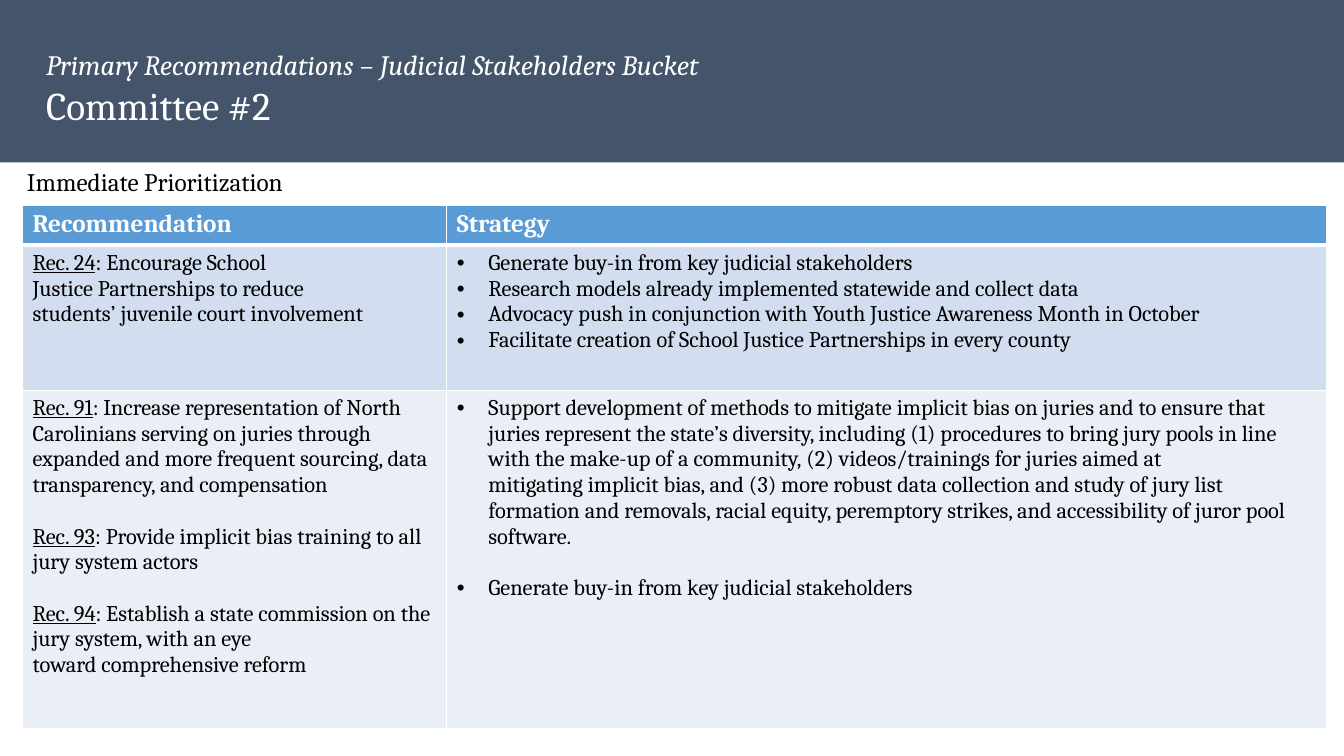
import pptx
import pptx.dml.color
import pptx.enum.shapes
import pptx.enum.text
import pptx.oxml.ns
import pptx.util
from lxml import etree

Pt = pptx.util.Pt
RGBColor = pptx.dml.color.RGBColor

# Content: "~" stands for a non-breaking space
KICKER = "Primary Recommendations – Judicial Stakeholders Bucket"
TITLE = "Committee #2"
SUBTITLE = "Immediate Prioritization"
HEADERS = ["Recommendation", "Strategy"]
# Each row: recommendations (label, text), strategies, gap between strategies
ROWS = [
    (
        [("Rec. 24", ":~Encourage School Justice~Partnerships to reduce "
                     "students’~juvenile court involvement")],
        ["Generate buy-in from key judicial stakeholders",
         "Research models already implemented statewide and collect data",
         "Advocacy push in conjunction with~Youth Justice Awareness Month in October",
         "Facilitate creation of School Justice Partnerships in every county"],
        0,
    ),
    (
        [("Rec. 91", ": Increase representation of~North Carolinians serving on "
                     "juries~through expanded and more frequent~sourcing, data "
                     "transparency, and~compensation"),
         ("Rec. 93", ":~Provide implicit bias training~to all jury system actors"),
         ("Rec. 94", ": Establish a state commission~on the jury system, with an "
                     "eye toward~comprehensive reform")],
        ["Support development of methods to~mitigate implicit bias on juries and "
         "to~ensure that juries represent the state’s diversity, including "
         "(1)~procedures to bring jury pools in line with the make-up of a "
         "community,~(2)~videos/trainings for juries aimed at mitigating~implicit "
         "bias, and (3)~more robust data collection and study of jury list "
         "formation and removals, racial equity, peremptory strikes, "
         "and~accessibility of juror pool software.",
         "Generate buy-in from key judicial stakeholders"],
        18.4,
    ),
]

# Style
FONT = "Cambria"
WHITE = RGBColor(0xFF, 0xFF, 0xFF)
BLACK = RGBColor(0, 0, 0)
BANNER = RGBColor(0x44, 0x54, 0x6A)
HEADER_FILL = RGBColor(0x5B, 0x9B, 0xD5)
ROW_FILLS = [RGBColor(0xD2, 0xDE, 0xEF), RGBColor(0xEA, 0xEF, 0xF7)]
COLUMN_WIDTHS = [303.1, 628.6]
ROW_HEIGHTS = [28, 103.5, 241.5]
RECOMMENDATION_GAP = 18.4
BULLET_INDENT = 22.5


def set_font(paragraph, size, color, bold=False, italic=False):
    font = paragraph.font
    font.name, font.size, font.bold, font.italic = FONT, Pt(size), bold, italic
    font.color.rgb = color


def add_text(slide, left, top, width, height, lines, wrap):
    """lines: (text, size, color, italic) tuples, one paragraph each."""
    frame = slide.shapes.add_textbox(Pt(left), Pt(top), Pt(width), Pt(height)).text_frame
    frame.word_wrap = wrap
    frame.auto_size = pptx.enum.text.MSO_AUTO_SIZE.SHAPE_TO_FIT_TEXT
    for paragraph, (text, size, color, italic) in zip(paragraphs(frame, len(lines)), lines):
        paragraph.text = text
        set_font(paragraph, size, color, italic=italic)


def paragraphs(frame, count, gap=0):
    for index in range(count):
        paragraph = frame.add_paragraph() if index else frame.paragraphs[0]
        if index and gap:
            paragraph.space_before = Pt(gap)
        yield paragraph


def add_run(paragraph, text, underline=False):
    run = paragraph.add_run()
    run.text = text.replace("~", chr(160))
    if underline:
        run.font.underline = True


def add_bullet(paragraph):
    properties = paragraph._p.get_or_add_pPr()
    properties.set("marL", str(Pt(BULLET_INDENT)))
    properties.set("indent", str(-Pt(BULLET_INDENT)))
    for tag, name, value in (("a:buFont", "typeface", "Arial"), ("a:buChar", "char", "•")):
        etree.SubElement(properties, pptx.oxml.ns.qn(tag)).set(name, value)


def style_cell(cell, fill, top=1, bottom=1):
    properties = cell._tc.get_or_add_tcPr()
    for side, width in (("L", 1), ("R", 1), ("T", top), ("B", bottom)):
        line = etree.SubElement(properties, pptx.oxml.ns.qn("a:ln" + side), w=str(Pt(width)))
        solid = etree.SubElement(line, pptx.oxml.ns.qn("a:solidFill"))
        etree.SubElement(solid, pptx.oxml.ns.qn("a:srgbClr"), val=str(WHITE))
    cell.fill.solid()
    cell.fill.fore_color.rgb = fill


presentation = pptx.Presentation()
presentation.slide_width, presentation.slide_height = Pt(960), Pt(540)
slide = presentation.slides.add_slide(presentation.slide_layouts[6])

# Banner and headings
banner = slide.shapes.add_shape(
    pptx.enum.shapes.MSO_SHAPE.RECTANGLE, 0, 0, Pt(960), Pt(116))
banner.shadow.inherit = False
banner.fill.solid()
banner.fill.fore_color.rgb = BANNER
banner.line.fill.background()
add_text(slide, 25.9, 30.2, 561.6, 65.5,
         [(KICKER, 20, WHITE, True), (TITLE, 28, WHITE, False)], wrap=False)

# Table
table = slide.shapes.add_table(
    len(ROW_HEIGHTS), len(COLUMN_WIDTHS), Pt(16.1), Pt(146.4),
    Pt(sum(COLUMN_WIDTHS)), Pt(sum(ROW_HEIGHTS))).table
for column, width in zip(table.columns, COLUMN_WIDTHS):
    column.width = Pt(width)
for row, height in zip(table.rows, ROW_HEIGHTS):
    row.height = Pt(height)

for index, header in enumerate(HEADERS):
    cell = table.cell(0, index)
    style_cell(cell, HEADER_FILL, bottom=3)
    paragraph = cell.text_frame.paragraphs[0]
    paragraph.text = header
    set_font(paragraph, 18, WHITE, bold=True)

for number, (recommendations, strategies, gap) in enumerate(ROWS, start=1):
    left_cell, right_cell = table.cell(number, 0), table.cell(number, 1)
    for cell in (left_cell, right_cell):
        style_cell(cell, ROW_FILLS[number - 1], top=3 if number == 1 else 1)
    slots = paragraphs(left_cell.text_frame, len(recommendations), RECOMMENDATION_GAP)
    for paragraph, (label, text) in zip(slots, recommendations):
        set_font(paragraph, 16, BLACK)
        add_run(paragraph, label, underline=True)
        add_run(paragraph, text)
    slots = paragraphs(right_cell.text_frame, len(strategies), gap)
    for paragraph, text in zip(slots, strategies):
        set_font(paragraph, 16, BLACK)
        add_bullet(paragraph)
        add_run(paragraph, text)

# Table caption
add_text(slide, 12.2, 115.2, 284.4, 28.8, [(SUBTITLE, 18, BLACK, False)], wrap=True)

presentation.save("out.pptx")
